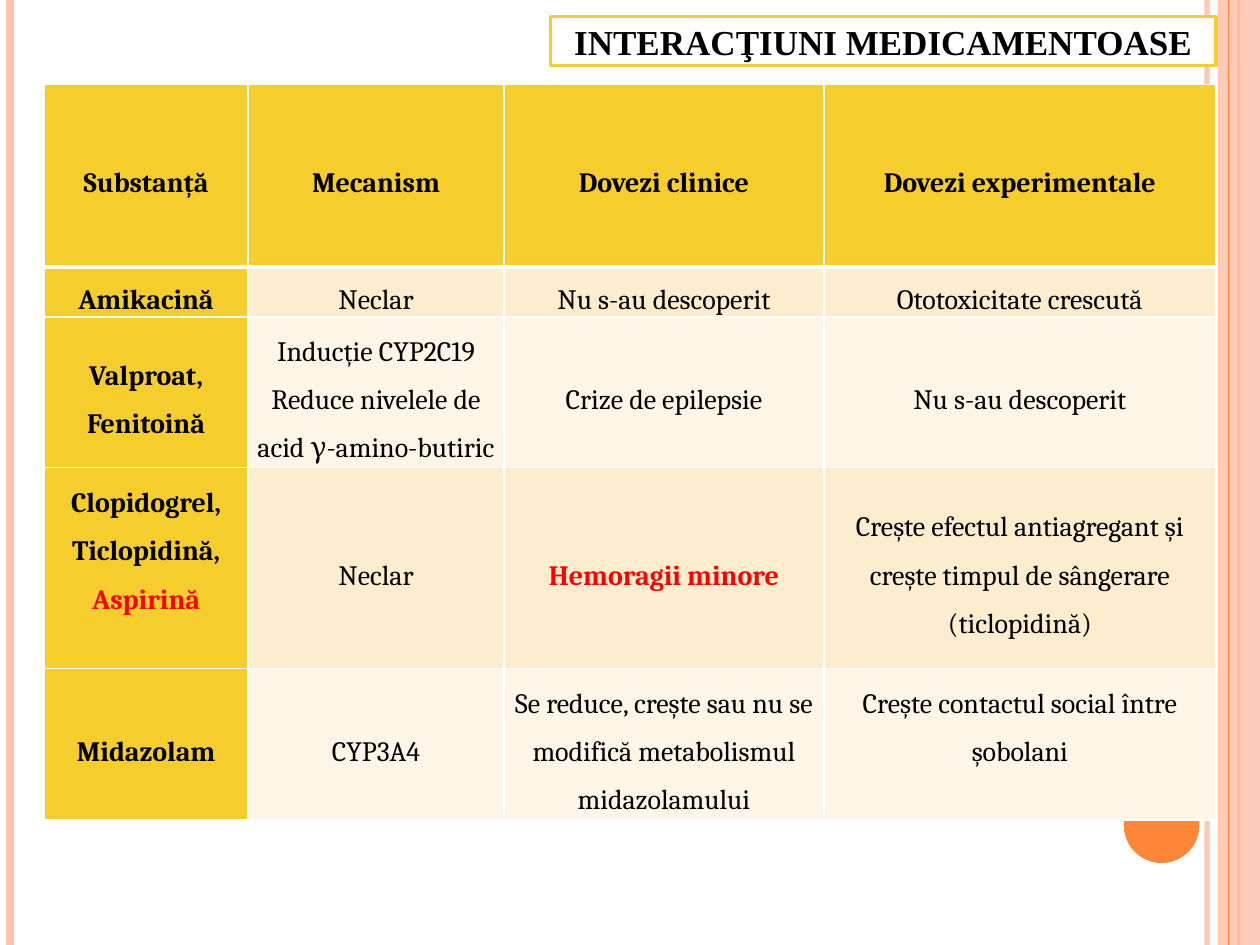
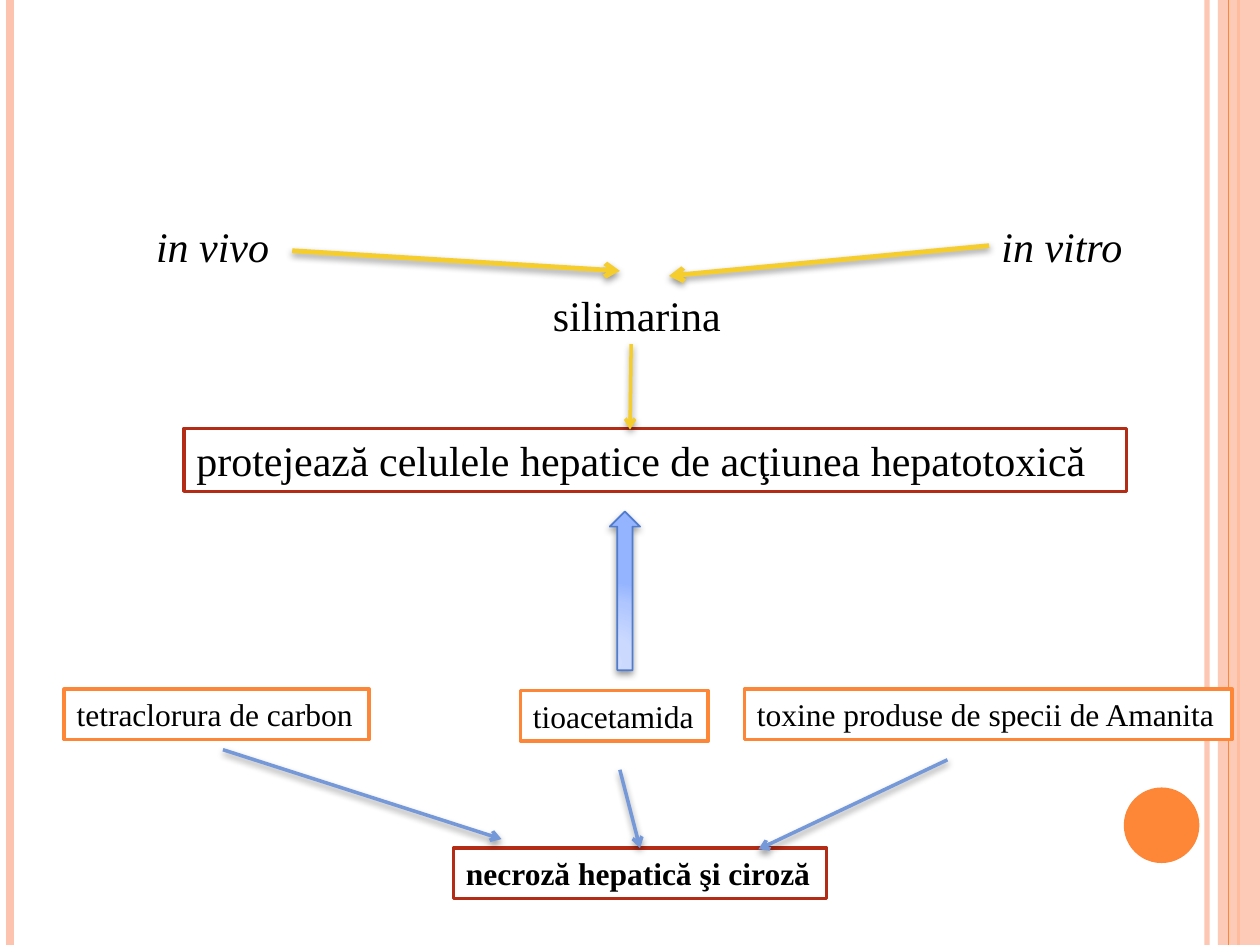
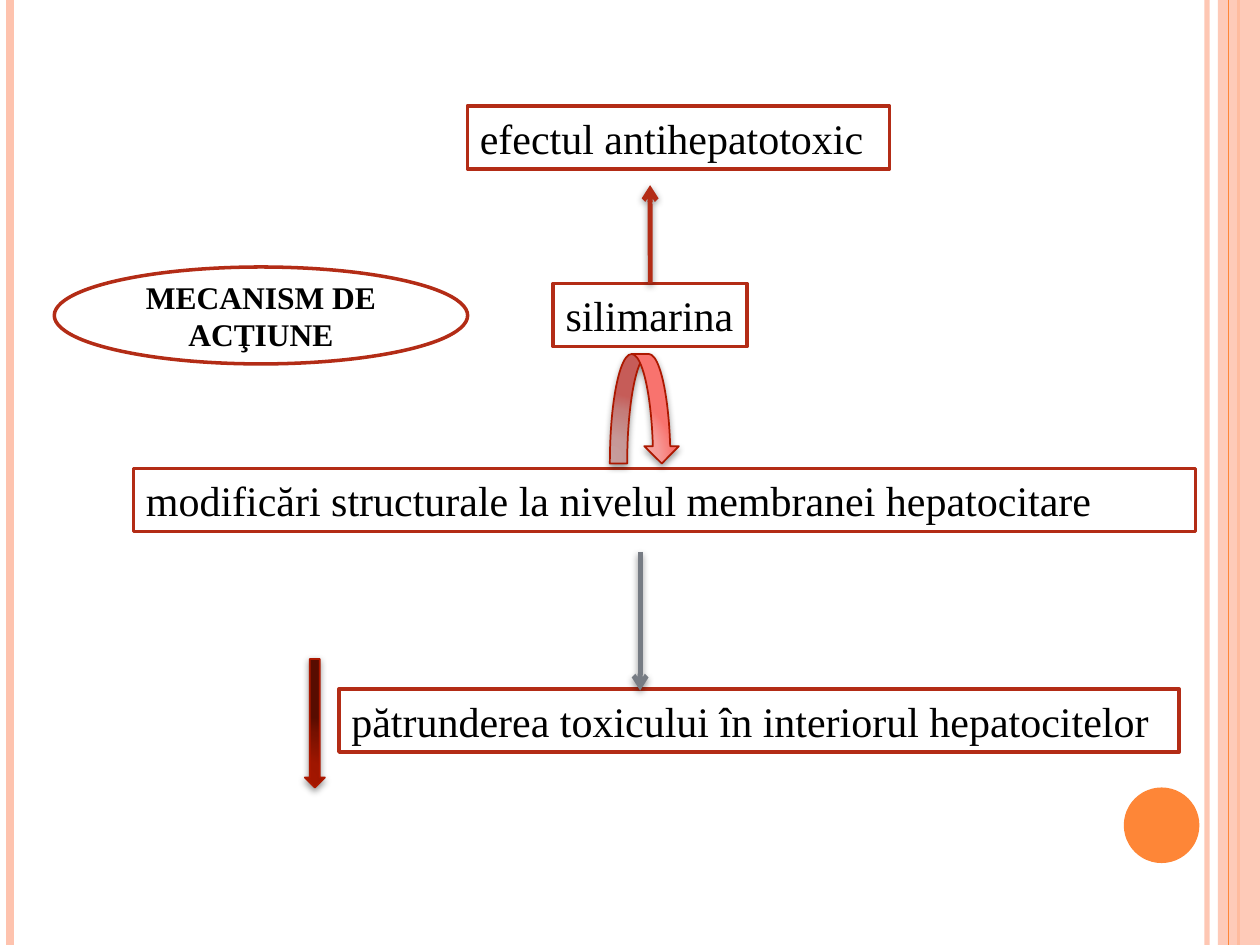
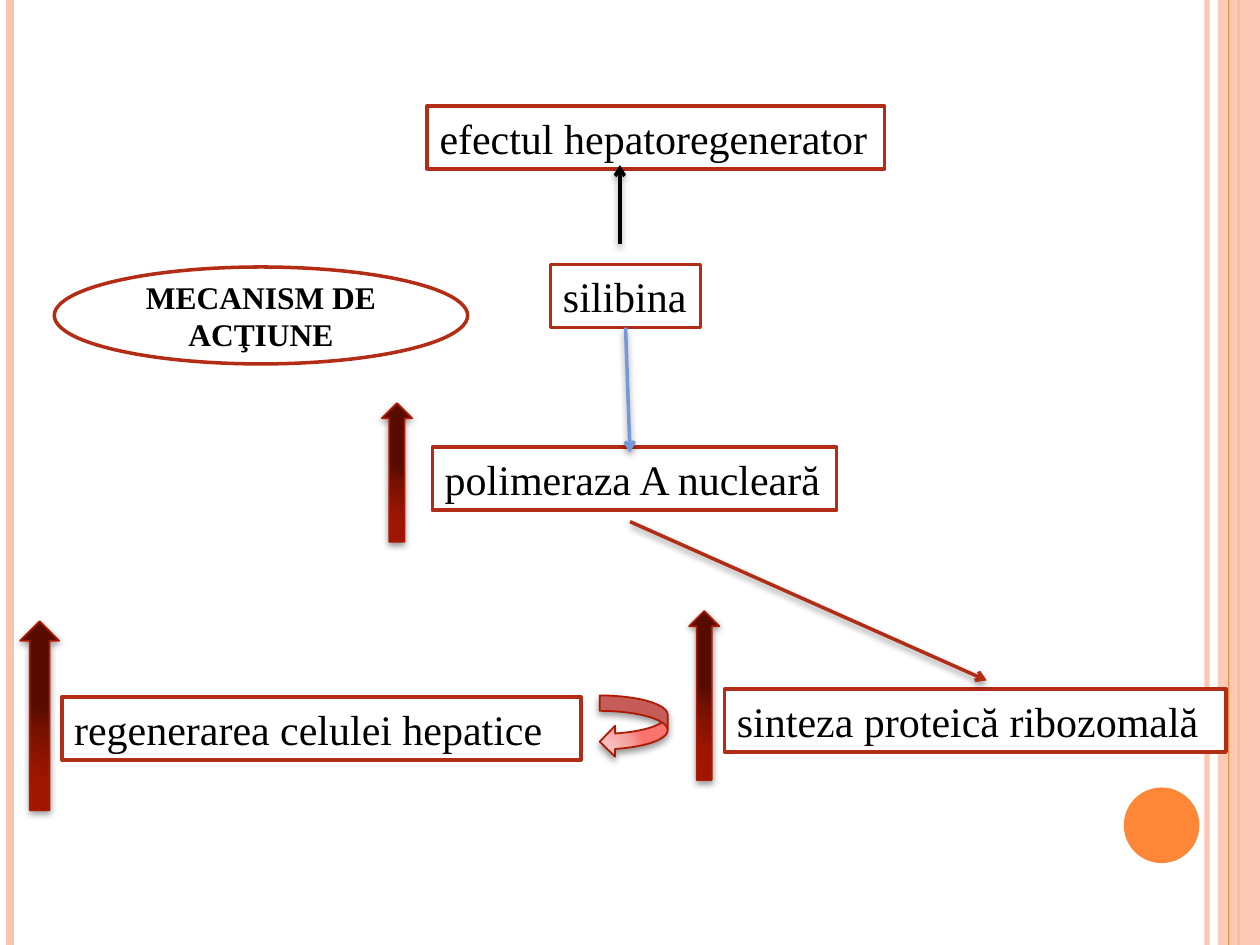
from dataclasses import dataclass

from lxml.etree import SubElement
from pptx import Presentation
from pptx.dml.color import RGBColor
from pptx.enum.shapes import MSO_CONNECTOR, MSO_SHAPE
from pptx.enum.text import MSO_ANCHOR, MSO_AUTO_SIZE, PP_ALIGN
from pptx.oxml.ns import qn
from pptx.util import Pt


@dataclass(frozen=True)
class Theme:
    black: str = "000000"
    white: str = "FFFFFF"
    red: str = "FF0000"
    yellow: str = "F5CD2D"
    row_dark: str = "FBEDCD"
    row_light: str = "FDF6E8"
    peach: str = "FEC3AE"
    orange: str = "FE8637"
    brick: str = "B32C16"
    blue: str = "7598D9"
    gray: str = "777C84"
    blue_edge: str = "4F7CCF"
    red_edge: str = "AC1800"
    blue_fade: tuple = ("CFDCFF", "CBD9FF", "AFC6FF", "95B4FF")
    dark_fade: tuple = ("A41700", "9F1600", "771100", "580C00")
    rose_fade: tuple = ("F8C5C3", "F8BFBD", "F69B98", "F8736E")
    fade_stops: tuple = (0, 30, 75, 100)
    soft_shadow: tuple = (40, 4, 2)
    near_shadow: tuple = (42, 4, 1.6)
    serif: str = "Times New Roman"
    table_font: str = "Cambria"
    large: float = 24
    title: float = 20
    label: float = 18
    cell: float = 16


def rgb(value):
    return RGBColor.from_string(value)


def assign(obj, values):
    for name, value in values.items():
        setattr(obj, name, value)


def add_xml(parent, tag, **attributes):
    return SubElement(parent, qn(tag), {k: str(v) for k, v in attributes.items()})


def add_color(parent, color, alpha=None):
    node = add_xml(parent, "a:srgbClr", val=color)
    if alpha:
        add_xml(node, "a:alpha", val=alpha * 1000)


class Deck:
    def __init__(self, theme):
        self.theme = theme
        self.prs = Presentation()
        assign(self.prs, {"slide_width": Pt(720), "slide_height": Pt(540)})
        self.slide = None

    def new_slide(self, layout=6):
        self.slide = self.prs.slides.add_slide(self.prs.slide_layouts[layout])

    def put_run(self, p, text, size, color=None, font=None, **style):
        r = p.add_run()
        r.text = text
        assign(r.font, {"name": font or self.theme.serif, "size": Pt(size), **style})
        r.font.color.rgb = rgb(color or self.theme.black)

    def effects(self, sp, shadow=None):
        node = add_xml(sp.element.spPr, "a:effectLst")
        if shadow:
            alpha, blur, distance = shadow
            node = add_xml(node, "a:outerShdw", blurRad=Pt(blur), dist=Pt(distance),
                           dir=5400000, rotWithShape=0)
            add_color(node, self.theme.black, alpha)

    def outline(self, sp, color, width):
        sp.line.color.rgb = rgb(color)
        sp.line.width = Pt(width)

    def paint(self, sp, fill, line=None, width=2):
        sp.fill.solid()
        sp.fill.fore_color.rgb = rgb(fill)
        if line:
            self.outline(sp, line, width)
        else:
            sp.line.fill.background()

    def fade(self, sp, colors):
        node = add_xml(sp.element.spPr, "a:gradFill", rotWithShape=1)
        stops = add_xml(node, "a:gsLst")
        for position, color in zip(self.theme.fade_stops, colors):
            add_color(add_xml(stops, "a:gs", pos=position * 1000), color)
        around = add_xml(node, "a:path", path="circle")
        add_xml(around, "a:fillToRect", l=5000, t=100000, r=120000, b=10000)

    def shape(self, kind, at):
        return self.slide.shapes.add_shape(kind, *map(Pt, at))

    def connector(self, start, end, color, width=2, shadow=None, arrow=True,
                  begin=None, finish=None):
        c = self.slide.shapes.add_connector(MSO_CONNECTOR.STRAIGHT, *map(Pt, start + end))
        self.outline(c, color, width)
        if arrow:
            add_xml(c.element.spPr.find(qn("a:ln")), "a:tailEnd", type="arrow")
            shadow = shadow or self.theme.soft_shadow
        self.effects(c, shadow)
        if begin:
            c.begin_connect(*begin)
        if finish:
            c.end_connect(*finish)
        return c

    def decorate_master(self):
        t = self.theme
        rules = ((689.8, t.peach, 3), (5.8, t.peach, 4.5), (707.8, t.orange, 1.5),
                 (702, t.orange, 0.75))
        parts = [self.connector((x, 0), (x, 540), color, width, arrow=False)
                 for x, color, width in rules]
        band = self.shape(MSO_SHAPE.RECTANGLE, (696, 0, 24, 540))
        dot = self.shape(MSO_SHAPE.OVAL, (642.2, 450, 43.2, 43.2))
        for sp, color in ((band, t.peach), (dot, t.orange)):
            self.paint(sp, color)
            self.effects(sp)
        for sp, alpha in ((parts[0], 93), (band, 87)):
            color = next(sp.element.spPr.iter(qn("a:srgbClr")))
            add_xml(color, "a:alpha", val=alpha * 1000)
        parts.insert(3, band)
        parts.append(dot)
        tree = self.prs.slide_master.shapes.element
        for i, sp in enumerate(parts):
            next(sp.element.iter(qn("p:cNvPr"))).set("id", str(20 + i))
            tree.insert(2 + i, sp.element)

    def title(self, text, at):
        sp = self.slide.shapes.title
        assign(sp, dict(zip(("left", "top", "width", "height"), map(Pt, at))))
        self.paint(sp, self.theme.white, self.theme.yellow)
        tf = sp.text_frame
        assign(tf, {"word_wrap": True, "auto_size": MSO_AUTO_SIZE.NONE,
                    "vertical_anchor": MSO_ANCHOR.MIDDLE})
        p = tf.paragraphs[0]
        p.alignment = PP_ALIGN.CENTER
        self.put_run(p, text, self.theme.title, bold=True)

    def fill_frame(self, tf, text, size, **style):
        assign(tf, {"word_wrap": True, "auto_size": MSO_AUTO_SIZE.NONE,
                    "vertical_anchor": MSO_ANCHOR.TOP, "margin_right": 0})
        p = tf.paragraphs[0]
        p.alignment = PP_ALIGN.LEFT
        self.put_run(p, text, size, **style)

    def label(self, text, at, **style):
        sp = self.slide.shapes.add_textbox(*map(Pt, at))
        self.fill_frame(sp.text_frame, text, self.theme.large, **style)
        return sp

    def box(self, text, at, line=None, size=None, **style):
        sp = self.shape(MSO_SHAPE.RECTANGLE, at)
        self.paint(sp, self.theme.white, line or self.theme.brick)
        self.effects(sp)
        self.fill_frame(sp.text_frame, text, size or self.theme.large, **style)
        return sp

    def oval(self, text, at):
        sp = self.shape(MSO_SHAPE.OVAL, at)
        self.paint(sp, self.theme.white, self.theme.brick)
        self.effects(sp)
        tf = sp.text_frame
        assign(tf, {"word_wrap": True, "vertical_anchor": MSO_ANCHOR.MIDDLE})
        p = tf.paragraphs[0]
        p.alignment = PP_ALIGN.CENTER
        self.put_run(p, text, self.theme.label, bold=True)

    def block_arrow(self, kind, at, colors, line, shadow=None):
        sp = self.shape(kind, at)
        self.fade(sp, colors)
        self.outline(sp, line, 1)
        self.effects(sp, shadow or self.theme.soft_shadow)

    def cell_borders(self, cell, widths):
        tc_pr = cell._tc.get_or_add_tcPr()
        for i, (side, width) in enumerate(widths.items()):
            ln = add_xml(tc_pr, f"a:ln{side}", w=Pt(width))
            add_color(add_xml(ln, "a:solidFill"), self.theme.white)
            tc_pr.insert(i, ln)

    def table(self, rows, at, widths, heights, lifted):
        t = self.theme
        frame = self.slide.shapes.add_table(len(rows), len(widths), *map(Pt, at),
                                            Pt(sum(widths)), Pt(sum(heights)))
        grid = frame.table
        grid.first_col = True
        for column, width in zip(grid.columns, widths):
            column.width = Pt(width)
        for i, (row, height) in enumerate(zip(rows, heights)):
            grid.rows[i].height = Pt(height)
            for j, text in enumerate(row):
                cell = grid.cell(i, j)
                head = i == 0 or j == 0
                cell.fill.solid()
                cell.fill.fore_color.rgb = rgb(
                    t.yellow if head else t.row_dark if i % 2 else t.row_light)
                self.cell_borders(cell, {"L": 1, "R": 1, "T": 3 if i == 1 else 1,
                                         "B": 3 if i == 0 else 1})
                assign(cell, {"margin_left": Pt(2.2), "margin_right": Pt(2.2),
                              "margin_top": 0,
                              "margin_bottom": Pt(27.6 if (i, j) in lifted else 0),
                              "vertical_anchor": MSO_ANCHOR.MIDDLE})
                self.fill_cell(cell.text_frame, text, head)

    def fill_cell(self, tf, text, head):
        t = self.theme
        for n, line in enumerate(text.split("\n")):
            p = tf.add_paragraph() if n else tf.paragraphs[0]
            assign(p, {"alignment": PP_ALIGN.CENTER, "line_spacing": 1.5})
            for k, part in enumerate(line.split("|")):
                if part:
                    self.put_run(p, part, t.cell, t.red if k else t.black,
                                 t.table_font, bold=head or k > 0)


INTERACTIONS = (
    ("Substanță", "Mecanism", "Dovezi clinice", "Dovezi experimentale"),
    ("Amikacină", "Neclar", "Nu s-au descoperit", "Ototoxicitate crescută"),
    ("Valproat, Fenitoină",
     "Inducție CYP2C19\nReduce nivelele de acid γ-amino-butiric",
     "Crize de epilepsie", "Nu s-au descoperit"),
    ("Clopidogrel, Ticlopidină, |Aspirină", "Neclar", "|Hemoragii minore",
     "Crește efectul antiagregant și crește timpul de sângerare (ticlopidină)"),
    ("Midazolam", "CYP3A4",
     "Se reduce, crește sau nu se modifică metabolismul midazolamului",
     "Crește contactul social între șobolani"),
)
MECHANISM = ("MECANISM DE ACŢIUNE", (31, 152.6, 236.2, 55.4))


def interactions_slide(deck):
    deck.title("INTERACŢIUNI MEDICAMENTOASE", (314.6, 9.4, 380.2, 28.1))
    deck.table(INTERACTIONS, (25.2, 48.2), (116.6, 146.2, 182.9, 223.9),
               (104.4, 28.5, 86, 115, 86.5), {(3, 0), (4, 3)})


def protection_slide(deck):
    t = deck.theme
    deck.label("in vivo", (82.1, 122.4, 85.7, 36), italic=True)
    in_vitro = deck.label("in vitro", (565.2, 122.4, 84.2, 36), italic=True)
    deck.label("silimarina", (308.9, 162, 110.9, 36))
    deck.connector((167, 143.3), (354.2, 154.8), t.yellow, 2.75, t.near_shadow)
    deck.connector((565.2, 140.4), (382.3, 157.7), t.yellow, 2.75, t.near_shadow,
                   begin=(in_vitro, 1))
    deck.box("protejează celulele hepatice de acţiunea hepatotoxică",
             (105.1, 244.8, 538.6, 36))
    deck.connector((360.7, 196.6), (360, 245.5), t.yellow)
    for text, left, top, width in (("tetraclorura de carbon", 36.7, 393.8, 174.2),
                                   ("tioacetamida", 297.4, 394.6, 107.3),
                                   ("toxine produse de specii de Amanita",
                                    425.5, 393.8, 278.6)):
        deck.box(text, (left, top, width, 28.8), t.orange, t.label)
    necrosis = deck.box("necroză hepatică şi ciroză", (259.2, 484.6, 213.1, 28.8),
                        size=t.label, bold=True)
    deck.connector((127.4, 428.4), (286.6, 479.5), t.blue)
    deck.connector((354.2, 439.9), (365.8, 484.6), t.blue, finish=(necrosis, 0))
    deck.connector((541.4, 434.2), (433.4, 485.3), t.blue)
    deck.block_arrow(MSO_SHAPE.UP_ARROW, (348.5, 292.3, 17.3, 90.7),
                     t.blue_fade, t.blue_edge)


def antihepatotoxic_slide(deck):
    t = deck.theme
    deck.box("efectul antihepatotoxic", (267.1, 60.5, 241.2, 36))
    silymarin = deck.box("silimarina", (316.1, 162, 110.9, 36))
    deck.box("modificări structurale la nivelul membranei hepatocitare",
             (76.3, 267.8, 607, 36))
    deck.box("pătrunderea toxicului în interiorul hepatocitelor",
             (193.7, 393.8, 480.2, 36))
    deck.block_arrow(MSO_SHAPE.DOWN_ARROW, (174.2, 376.6, 11.5, 73.4),
                     t.dark_fade, t.red_edge, t.near_shadow)
    deck.connector((372.2, 162), (371.5, 105.8), t.brick, 2.75, t.near_shadow,
                   begin=(silymarin, 0))
    deck.block_arrow(MSO_SHAPE.CURVED_DOWN_ARROW, (348.5, 202.3, 39.6, 62.6),
                     t.rose_fade, t.red_edge)
    deck.connector((365.8, 315.4), (365.8, 394.6), t.gray, 2.75, t.near_shadow)
    deck.oval(*MECHANISM)


def regeneration_slide(deck):
    t = deck.theme
    deck.box("efectul hepatoregenerator", (244.1, 60.5, 261.4, 36))
    silybin = deck.box("silibina", (314.6, 151.2, 85.7, 36))
    deck.box("polimeraza A nucleară", (247, 255.6, 231.1, 36))
    deck.box("sinteza proteică ribozomală", (414, 393.8, 286.6, 36))
    deck.box("regenerarea celulei hepatice", (35.3, 398.2, 296.6, 36))
    for at in ((218.2, 230.4, 17.3, 79.2), (393.8, 349.2, 17.3, 96.5),
               (11.5, 355, 22.3, 108)):
        deck.block_arrow(MSO_SHAPE.UP_ARROW, at, t.dark_fade, t.red_edge, t.near_shadow)
    deck.connector((354.2, 139.7), (354.2, 94.3), t.black)
    deck.connector((357.5, 187.2), (360, 258.5), t.blue, begin=(silybin, 2))
    deck.connector((360, 298.1), (563.8, 388.8), t.brick)
    deck.block_arrow(MSO_SHAPE.CURVED_LEFT_ARROW, (342.7, 397.4, 38.9, 35.3),
                     t.rose_fade, t.red_edge)
    deck.oval(*MECHANISM)


def main():
    deck = Deck(Theme())
    deck.new_slide(5)
    deck.decorate_master()
    interactions_slide(deck)
    for build in (protection_slide, antihepatotoxic_slide, regeneration_slide):
        deck.new_slide()
        build(deck)
    deck.prs.save("out.pptx")


if __name__ == "__main__":
    main()
